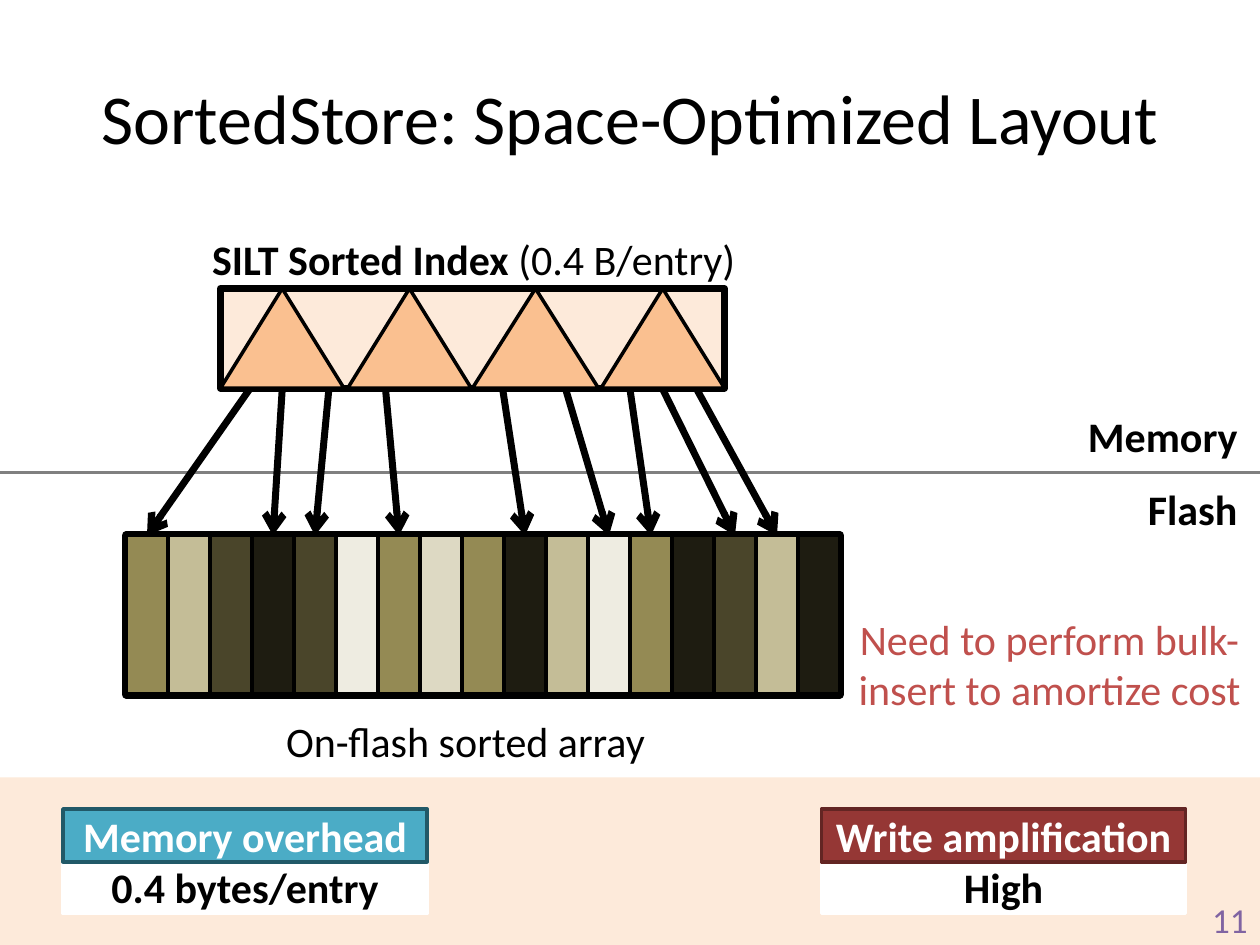
from lxml import etree
from pptx import Presentation
from pptx.dml.color import RGBColor
from pptx.enum.shapes import MSO_CONNECTOR, MSO_SHAPE
from pptx.enum.text import MSO_ANCHOR, PP_ALIGN
from pptx.oxml.ns import qn
from pptx.util import Inches, Pt

BLACK = RGBColor(0x00, 0x00, 0x00)
WHITE = RGBColor(0xFF, 0xFF, 0xFF)
GRAY = RGBColor(0x80, 0x80, 0x80)
PEACH = RGBColor(0xFD, 0xEA, 0xDA)
ORANGE = RGBColor(0xFA, 0xC0, 0x90)
TEAL = RGBColor(0x4B, 0xAC, 0xC6)
DARK_TEAL = RGBColor(0x21, 0x59, 0x68)
RED = RGBColor(0xC0, 0x50, 0x4D)
BRICK = RGBColor(0x95, 0x37, 0x35)
DARK_BRICK = RGBColor(0x63, 0x25, 0x23)
PURPLE = RGBColor(0x80, 0x64, 0xA2)
OLIVE = RGBColor(0x94, 0x8A, 0x54)
TAN = RGBColor(0xC4, 0xBD, 0x97)
BROWN = RGBColor(0x4A, 0x45, 0x2A)
NIGHT = RGBColor(0x1E, 0x1C, 0x11)
IVORY = RGBColor(0xEE, 0xEC, 0xE1)
SAND = RGBColor(0xDD, 0xD9, 0xC3)

prs = Presentation()
prs.slide_width, prs.slide_height = Inches(10), Inches(7.5)
slide = prs.slides.add_slide(prs.slide_layouts[6])
shapes = slide.shapes


def add_box(box, fill=None, line=None, width=2, kind=MSO_SHAPE.RECTANGLE):
    """Add a preset shape; box is left, top, width, height in inches."""
    shape = shapes.add_shape(kind, *map(Inches, box))
    shape.shadow.inherit = False
    if fill is None:
        shape.fill.background()
    else:
        shape.fill.solid()
        shape.fill.fore_color.rgb = fill
    if line is None:
        shape.line.fill.background()
    else:
        shape.line.color.rgb = line
        shape.line.width = Pt(width)
    return shape


def write(shape, text, size=24, color=BLACK, bold=False, align=PP_ALIGN.CENTER):
    frame = shape.text_frame
    frame.word_wrap = True
    frame.vertical_anchor = MSO_ANCHOR.MIDDLE
    frame.text = text
    paragraph = frame.paragraphs[0]
    paragraph.alignment = align
    font = paragraph.runs[0].font
    font.name, font.size, font.bold = "Calibri", Pt(size), bold
    font.color.rgb = color
    return paragraph


# Boundary between memory and flash, and the summary band
boundary = shapes.add_connector(
    MSO_CONNECTOR.STRAIGHT, Inches(0), Inches(3.75), Inches(10), Inches(3.75))
boundary.line.color.rgb = GRAY
boundary.line.width = Pt(1.5)
etree.SubElement(boundary._element.spPr, qn("a:effectLst"))
add_box((0, 6.17, 10, 1.33), PEACH)

# Summary of costs
for left, heading, value, fill, edge in (
    (0.5, "Memory overhead", "0.4 bytes/entry", TEAL, DARK_TEAL),
    (6.52, "Write amplification", "High", BRICK, DARK_BRICK),
):
    write(add_box((left, 6.83, 2.89, 0.42), WHITE, WHITE), value, bold=True)
    write(add_box((left, 6.42, 2.89, 0.42), fill, edge), heading,
          color=WHITE, bold=True)

# On-flash sorted array
ARRAY_LEFT, ARRAY_TOP, ARRAY_HEIGHT, CELL_WIDTH = 1, 4.25, 1.26, 1 / 3
cell_colors = (OLIVE, TAN, BROWN, NIGHT, BROWN, IVORY, OLIVE, SAND, OLIVE,
               NIGHT, TAN, IVORY, OLIVE, NIGHT, BROWN, TAN, NIGHT)
add_box((ARRAY_LEFT, ARRAY_TOP, CELL_WIDTH * len(cell_colors), ARRAY_HEIGHT),
        line=BLACK, width=5)
cells = [
    add_box((ARRAY_LEFT + i * CELL_WIDTH, ARRAY_TOP, CELL_WIDTH, ARRAY_HEIGHT),
            color, BLACK)
    for i, color in enumerate(cell_colors)
]

# Sorted index made of tries
add_box((1.75, 2.29, 4, 0.79), PEACH, BLACK, 4)
for left, width in ((1.75, 0.98), (2.76, 0.98), (3.75, 1), (4.77, 0.98)):
    add_box((left, 2.29, width, 0.79), ORANGE, BLACK,
            kind=MSO_SHAPE.ISOSCELES_TRIANGLE)

# Pointers from the index to array cells
for start, cell in ((1.98, 0), (2.24, 3), (2.61, 4), (3.06, 6), (3.99, 9),
                    (4.49, 11), (5, 12), (5.26, 14), (5.53, 15)):
    pointer = shapes.add_connector(
        MSO_CONNECTOR.STRAIGHT, Inches(start), Inches(3.09),
        Inches(start), Inches(ARRAY_TOP))
    pointer.end_connect(cells[cell], 0)
    pointer.line.color.rgb = BLACK
    pointer.line.width = Pt(4)
    etree.SubElement(pointer.line._get_or_add_ln(), qn("a:tailEnd"), type="arrow")
    etree.SubElement(pointer._element.spPr, qn("a:effectLst"))

# Title, labels and page number
for box, text, style in (
    ((0.5, 0.3, 9, 1.25), "SortedStore: Space-Optimized Layout", {"size": 40}),
    ((2.06, 5.67, 3.27, 0.42), "On-flash sorted array", {}),
    ((8.42, 3.25, 1.5, 0.42), "Memory", {"bold": True, "align": PP_ALIGN.RIGHT}),
    ((9, 3.83, 0.92, 0.42), "Flash", {"bold": True, "align": PP_ALIGN.RIGHT}),
    ((6.5, 4.62, 3.66, 1.3), "Need to perform bulk-insert to amortize cost",
     {"color": RED}),
    ((7.67, 7.1, 2.33, 0.4), "11",
     {"size": 20, "color": PURPLE, "align": PP_ALIGN.RIGHT}),
):
    write(shapes.add_textbox(*map(Inches, box)), text, **style)

index_label = shapes.add_textbox(*map(Inches, (1.33, 1.82, 4.86, 0.47)))
index_caption = write(index_label, "SILT Sorted Index", bold=True)
entry_size = index_caption.add_run()
entry_size.text = " (0.4 B/entry)"
entry_size.font.name, entry_size.font.size = "Calibri", Pt(24)
entry_size.font.color.rgb = BLACK

prs.save("out.pptx")
